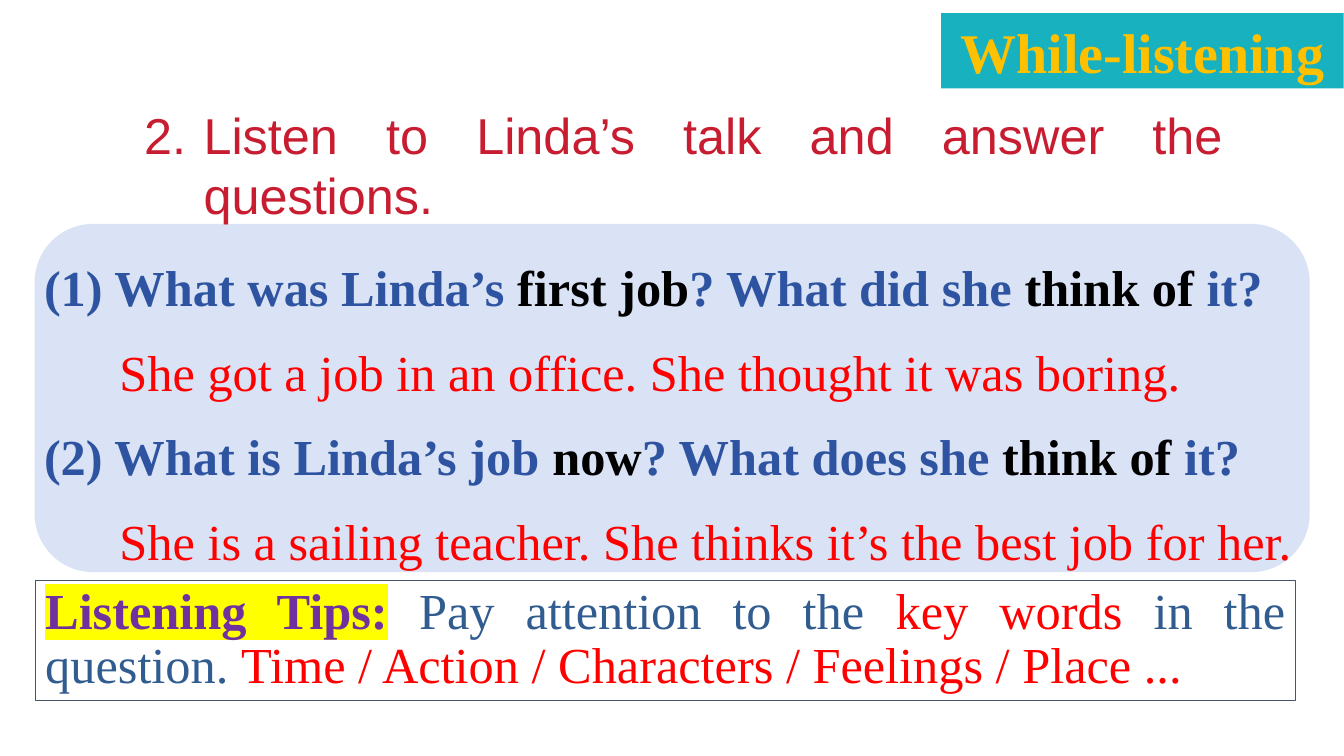
import pptx
import pptx.util
import pptx.dml.color
import pptx.enum.shapes
import pptx.enum.text
import pptx.oxml
import pptx.oxml.ns

Cm = pptx.util.Cm
Pt = pptx.util.Pt
RGBColor = pptx.dml.color.RGBColor
SHAPE = pptx.enum.shapes.MSO_SHAPE
ALIGN = pptx.enum.text.PP_ALIGN
ANCHOR = pptx.enum.text.MSO_ANCHOR

TEAL = RGBColor(0x17, 0xB1, 0xBF)
GOLD = RGBColor(0xFF, 0xC0, 0x00)
PALE = RGBColor(0xDA, 0xE3, 0xF5)
BLUE = RGBColor(0x2E, 0x54, 0xA1)
STEEL = RGBColor(0x31, 0x5C, 0x8F)
SLATE = RGBColor(0x44, 0x54, 0x6A)
CRIMSON = RGBColor(0xC8, 0x1D, 0x31)
RED = RGBColor(0xFF, 0x00, 0x00)
PURPLE = RGBColor(0x70, 0x30, 0xA0)
YELLOW = RGBColor(0xFF, 0xFF, 0x00)
BLACK = RGBColor(0x00, 0x00, 0x00)
WHITE = RGBColor(0xFF, 0xFF, 0xFF)

SERIF = "Times New Roman"
TALK = [
    ([("(1) What was Linda’s ", BLUE), ("first job", BLACK),
      ("? What did she ", BLUE), ("think of ", BLACK), ("it?", BLUE)],
     "She got a job in an office. She thought it was boring."),
    ([("(2) What is Linda’s job ", BLUE), ("now", BLACK),
      ("? What does she ", BLUE), ("think of ", BLACK), ("it?", BLUE)],
     "She is a sailing teacher. She thinks it’s the best job for her."),
]
TIPS = [("Pay attention to the ", STEEL), ("key words ", RED),
        ("in the question. ", STEEL),
        ("Time / Action / Characters / Feelings / Place ...", RED)]


def add_panel(slide, kind, box, fill, line=None, width=1):
    panel = slide.shapes.add_shape(kind, *map(Cm, box))
    panel.shadow.inherit = False
    panel.fill.solid()
    panel.fill.fore_color.rgb = fill
    if line is None:
        panel.line.fill.background()
    else:
        panel.line.color.rgb = line
        panel.line.width = Pt(width)
    panel.text_frame.word_wrap = True
    return panel


def add_box(slide, box):
    frame = slide.shapes.add_textbox(*map(Cm, box)).text_frame
    frame.word_wrap = True
    return frame


def add_run(para, text, color):
    run = para.add_run()
    run.text = text
    run.font.color.rgb = color
    return run


def set_font(para, name=SERIF, size=36, bold=None):
    para.font.name = name
    para.font.size = Pt(size)
    para.font.bold = bold


def set_indent(para, left, first):
    props = para._p.get_or_add_pPr()
    props.set("marL", str(Cm(left)))
    props.set("indent", str(Cm(first)))
    return props


def add_child(parent, tag, **attrs):
    child = pptx.oxml.parse_xml(f"<a:{tag} {pptx.oxml.ns.nsdecls('a')}/>")
    for key, value in attrs.items():
        child.set(key, value)
    parent.append(child)
    return child


def mark(run, color):
    """Highlight a run that has a colour but no font name of its own."""
    light = add_child(run._r.get_or_add_rPr(), "highlight")
    add_child(light, "srgbClr", val=str(color))


def add_tag(slide):
    tag = add_panel(slide, SHAPE.RECTANGLE, (23.72, 0.33, 10.14, 1.9), TEAL)
    para = tag.text_frame.paragraphs[0]
    para.alignment = ALIGN.CENTER
    set_font(para, size=40, bold=True)
    add_run(para, "While-listening", GOLD)


def add_talk(slide):
    frame = add_box(slide, (0.86, 5.72, 32.1, 8.86))
    para = frame.paragraphs[0]
    for index, (parts, answer) in enumerate(TALK):
        if index:
            para = frame.add_paragraph()
        para.line_spacing = 1.4
        set_font(para, bold=True)
        for text, color in parts:
            add_run(para, text, color)
        para = frame.add_paragraph()
        para.line_spacing = 1.4
        set_indent(para, 0, 1.9)
        set_font(para)
        add_run(para, answer, RED)


def add_task(slide):
    para = add_box(slide, (3.38, 2.49, 27.69, 1.8)).paragraphs[0]
    para.alignment = ALIGN.JUSTIFY
    props = set_indent(para, 1.5, -1.5)
    add_child(props, "buFont", typeface="+mj-lt")
    add_child(props, "buAutoNum", type="arabicPeriod", startAt="2")
    set_font(para, "Arial")
    add_run(para, "Listen to Linda’s talk and answer the questions.", CRIMSON)


def add_tips(slide):
    panel = add_panel(slide, SHAPE.RECTANGLE, (0.89, 14.63, 31.75, 3.02),
                      WHITE, SLATE, 0.75)
    panel.text_frame.vertical_anchor = ANCHOR.TOP
    para = panel.text_frame.paragraphs[0]
    para.alignment = ALIGN.JUSTIFY
    para.line_spacing = 0.9
    set_font(para)
    head = add_run(para, "Listening Tips:", PURPLE)
    head.font.bold = True
    mark(head, YELLOW)
    add_run(para, " ", PURPLE).font.bold = True
    for text, color in TIPS:
        add_run(para, text, color)


def main():
    deck = pptx.Presentation()
    deck.slide_width = Cm(33.87)
    deck.slide_height = Cm(19.05)
    slide = deck.slides.add_slide(deck.slide_layouts[6])
    add_panel(slide, SHAPE.ROUNDED_RECTANGLE, (0.89, 5.66, 32.1, 8.74),
              PALE, PALE)
    add_tag(slide)
    add_talk(slide)
    add_task(slide)
    add_tips(slide)
    deck.save("out.pptx")


if __name__ == "__main__":
    main()
